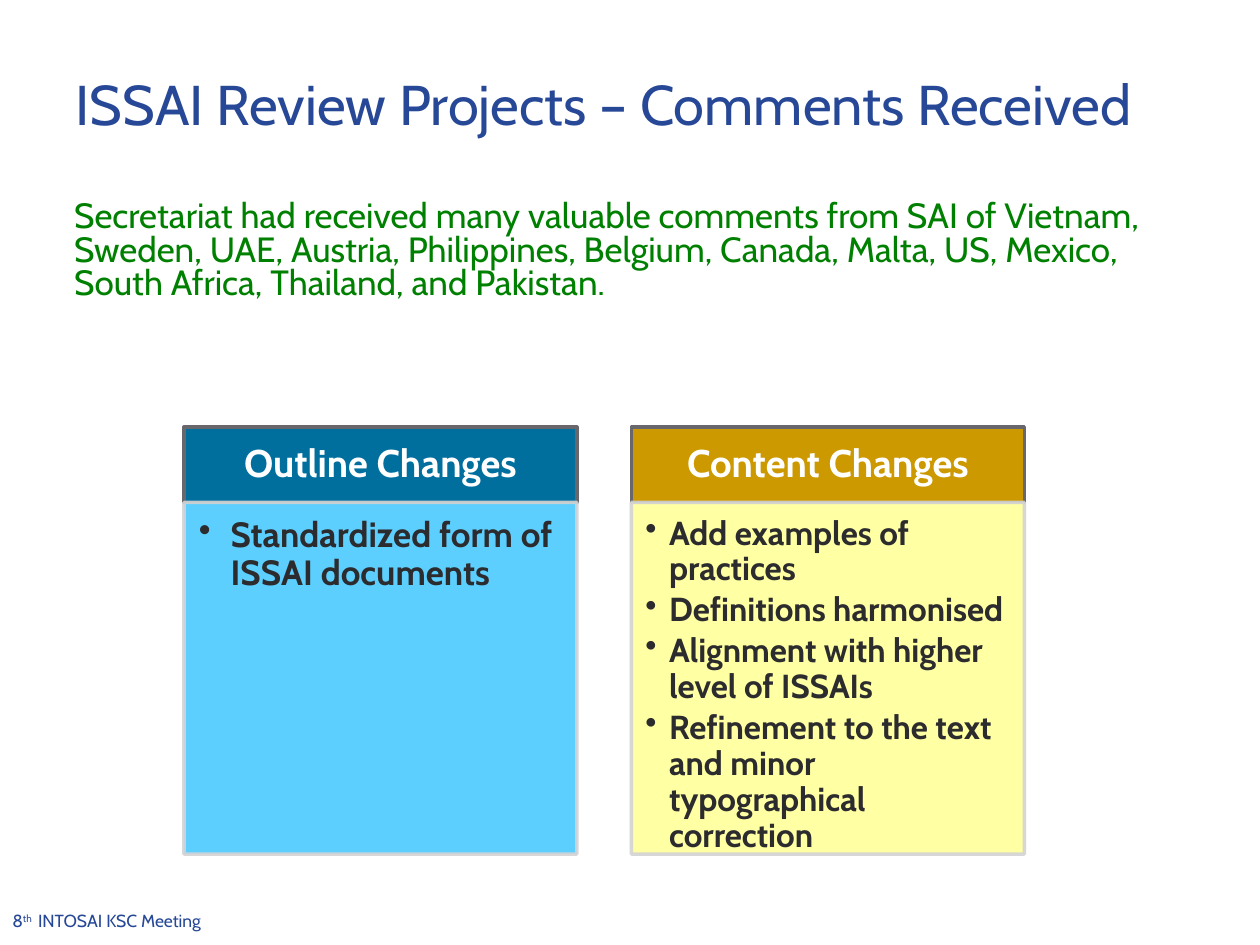
import pptx
import pptx.dml.color
import pptx.enum.shapes
import pptx.enum.text
import pptx.oxml
import pptx.oxml.ns
import pptx.util
from pptx.util import Cm

FONT = "Cabin"
NAVY = "274896"
ALIGN = pptx.enum.text.PP_ALIGN
ANCHOR = pptx.enum.text.MSO_ANCHOR
PANEL_WIDTH = 7.92
PANEL_TOP = 8.61
HEADER_HEIGHT = 1.52
LIST_HEIGHT = 7.09


def color(value):
    return pptx.dml.color.RGBColor.from_string(value)


def add_xml(parent, tag, **attributes):
    child = pptx.oxml.parse_xml(f"<a:{tag} {pptx.oxml.ns.nsdecls('a')}/>")
    for name, value in attributes.items():
        child.set(name, str(value))
    parent.append(child)


def place(box, left, top, width, height):
    box.left, box.top = Cm(left), Cm(top)
    box.width, box.height = Cm(width), Cm(height)


def set_insets(frame, left, top, right, bottom):
    frame.margin_left, frame.margin_top = Cm(left), Cm(top)
    frame.margin_right, frame.margin_bottom = Cm(right), Cm(bottom)


def format_span(span, size, hue, bold=False):
    span.font.name = FONT
    span.font.size = pptx.util.Pt(size)
    span.font.bold = bold
    span.font.color.rgb = color(hue)


def fill_placeholder(box, text, bounds, size, hue, anchor):
    place(box, *bounds)
    frame = box.text_frame
    frame.text = text
    frame.auto_size = pptx.enum.text.MSO_AUTO_SIZE.NONE
    frame.vertical_anchor = anchor
    para = frame.paragraphs[0]
    para.alignment = ALIGN.LEFT
    format_span(para.runs[0], size, hue)
    return para


def add_footer(page):
    box = page.shapes.add_textbox(Cm(0), Cm(18.06), Cm(10.24), Cm(0.99))
    frame = box.text_frame
    frame.word_wrap = True
    frame.vertical_anchor = ANCHOR.MIDDLE
    para = frame.paragraphs[0]
    for text, baseline in (("8", 0), ("th ", 30000), (" INTOSAI KSC Meeting", 0)):
        span = para.add_run()
        span.text = text
        format_span(span, 10, NAVY)
        if baseline:
            span.font._element.set("baseline", str(baseline))


def add_panel(page, left, top, height, fill, line):
    box = page.shapes.add_shape(
        pptx.enum.shapes.MSO_SHAPE.RECTANGLE,
        Cm(left), Cm(top), Cm(PANEL_WIDTH), Cm(height))
    box.shadow.inherit = False
    box.fill.solid()
    box.fill.fore_color.rgb = color(fill)
    box.line.color.rgb = color(line)
    box.line.width = pptx.util.Pt(2)
    box.text_frame.word_wrap = True
    return box


def add_header(page, left, text, fill):
    box = add_panel(page, left, PANEL_TOP, HEADER_HEIGHT, fill, "68676C")
    frame = box.text_frame
    frame.text = text
    frame.vertical_anchor = ANCHOR.MIDDLE
    set_insets(frame, 0.43, 0.25, 0.43, 0.25)
    para = frame.paragraphs[0]
    para.alignment = ALIGN.CENTER
    para.line_spacing = 0.9
    format_span(para.runs[0], 22, "FFFFFF", True)


def add_list(page, left, items, fill, size, indent, insets):
    box = add_panel(page, left, PANEL_TOP + HEADER_HEIGHT, LIST_HEIGHT, fill, "D4D3D4")
    for shade in box._element.spPr.iter(pptx.oxml.ns.qn("a:srgbClr")):
        add_xml(shade, "alpha", val=90000)
    frame = box.text_frame
    frame.text = "\n".join(items)
    frame.vertical_anchor = ANCHOR.TOP
    set_insets(frame, *insets)
    for para in frame.paragraphs:
        properties = para._p.get_or_add_pPr()
        properties.set("marL", str(Cm(indent)))
        properties.set("indent", str(-Cm(indent)))
        add_xml(properties, "buChar", char="•")
        para.level = 1
        para.alignment = ALIGN.LEFT
        para.line_spacing = 0.9
        para.space_after = pptx.util.Pt(size * 0.15)
        format_span(para.runs[0], size, "2C2B2E", True)


def main():
    deck = pptx.Presentation()
    deck.slide_width, deck.slide_height = Cm(25.4), Cm(19.05)
    page = deck.slides.add_slide(deck.slide_layouts[1])
    fill_placeholder(
        page.shapes.title, "ISSAI Review Projects – Comments Received",
        (1.27, 0.91, 24.08, 2.34), 32, NAVY, ANCHOR.MIDDLE)
    intro = fill_placeholder(
        page.placeholders[1],
        "Secretariat had received many valuable comments from SAI of Vietnam, "
        "Sweden, UAE, Austria, Philippines, Belgium, Canada, Malta, US, Mexico, "
        "South Africa, Thailand, and Pakistan.",
        (1.24, 3.94, 23.47, 3.2), 20, "008000", ANCHOR.TOP)
    properties = intro._p.get_or_add_pPr()
    properties.set("marL", "0")
    properties.set("indent", "0")
    add_xml(properties, "buNone")
    intro.line_spacing = 0.8
    intro.space_before = pptx.util.Pt(0)
    add_footer(page)

    columns = (
        (3.71, "Outline Changes", "006F9E", "4BCAFF", 20, 0.64,
         (0.3, 0.3, 0.41, 0.43), ["Standardized form of ISSAI documents"]),
        (12.73, "Content Changes", "CC9900", "FFFF99", 19, 0.48,
         (0.28, 0.28, 0.38, 0.43),
         ["Add examples of practices", "Definitions harmonised",
          "Alignment with higher level of ISSAIs",
          "Refinement to the text and minor typographical correction"]),
    )
    for left, heading, dark, light, size, indent, insets, items in columns:
        add_header(page, left, heading, dark)
        add_list(page, left, items, light, size, indent, insets)
    deck.save("out.pptx")


if __name__ == "__main__":
    main()
